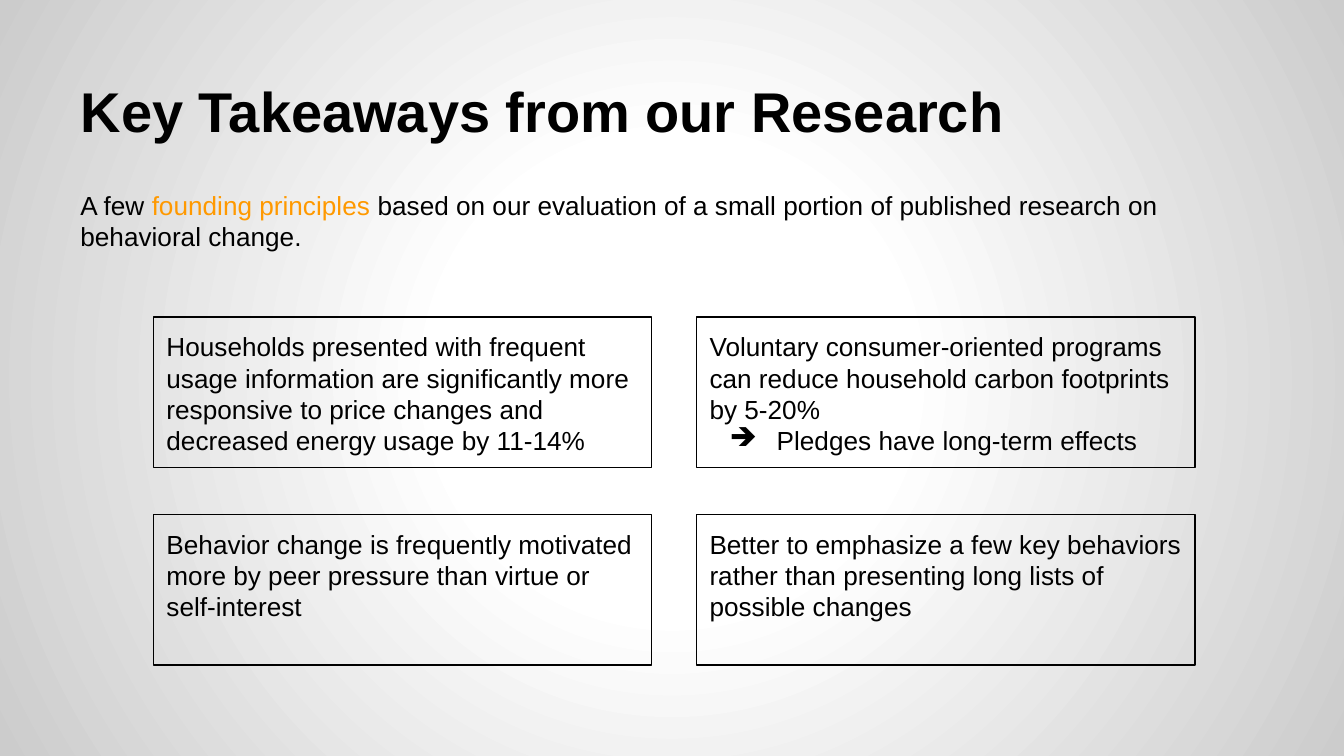
import pptx
import pptx.dml.color
import pptx.enum.shapes
import pptx.enum.text
import pptx.oxml
import pptx.oxml.ns
import pptx.util

Pt = pptx.util.Pt
RGBColor = pptx.dml.color.RGBColor

BLACK = RGBColor(0x00, 0x00, 0x00)
ORANGE = RGBColor(0xFF, 0x99, 0x00)
WHITE = RGBColor(0xFF, 0xFF, 0xFF)
GREY = RGBColor(0xCC, 0xCC, 0xCC)

BODY = {"name": "Arial", "size": Pt(14), "bold": False}
TITLE = {"name": "Arial", "size": Pt(30), "bold": True}
MARGIN = Pt(7.2)
FRAME = {"word_wrap": True, "margin_left": MARGIN, "margin_right": MARGIN,
         "margin_top": MARGIN, "margin_bottom": MARGIN,
         "auto_size": pptx.enum.text.MSO_AUTO_SIZE.NONE}

BOX_LEFT, BOX_TOP = 82.1, 169.9
BOX_WIDTH, BOX_HEIGHT = 267.1, 80.6
COLUMN_STEP, ROW_STEP = 290.9, 105.8

INTRO = [
    ("A few ", BLACK),
    ("founding principles ", ORANGE),
    ("based on our evaluation of a small portion of published research "
     "on behavioral change.", BLACK),
]
PLEDGES = "Pledges have long-term effects"
TAKEAWAYS = [
    ["Households presented with frequent usage information are significantly "
     "more responsive to price changes and decreased energy usage by 11-14%"],
    ["Voluntary consumer-oriented programs can reduce household carbon "
     "footprints by 5-20%", PLEDGES],
    ["Behavior change is frequently motivated more by peer pressure than "
     "virtue or self-interest"],
    ["Better to emphasize a few key behaviors rather than presenting long "
     "lists of possible changes"],
]


def set_attributes(obj, values):
    for name, value in values.items():
        setattr(obj, name, value)


def set_frame(tf, anchor):
    set_attributes(tf, FRAME)
    tf.vertical_anchor = anchor


def add_run(p, text, font, color=BLACK):
    r = p.add_run()
    r.text = text
    set_attributes(r.font, font)
    r.font.color.rgb = color


def set_radial_background(s):
    """Fill the slide with a circular gradient, white in the middle."""
    fill = s.background.fill
    fill.gradient()
    grad = s.background._cSld.bg.bgPr.find(pptx.oxml.ns.qn("a:gradFill"))
    for child in list(grad):
        grad.remove(child)
    stops = "".join(
        f'<a:gs pos="{percent * 1000}"><a:srgbClr val="{color}"/></a:gs>'
        for percent, color in [(0, WHITE), (30, WHITE), (100, GREY)])
    new = pptx.oxml.parse_xml(
        f'<a:gradFill {pptx.oxml.ns.nsdecls("a")}><a:gsLst>{stops}</a:gsLst>'
        '<a:path path="circle"><a:fillToRect l="50000" t="50000" r="50000" '
        'b="50000"/></a:path></a:gradFill>')
    grad.extend(list(new))


def set_title(s, text):
    sp = s.shapes.title
    set_attributes(sp, {"left": Pt(36), "top": Pt(16.6),
                        "width": Pt(648), "height": Pt(67.7)})
    set_frame(sp.text_frame, pptx.enum.text.MSO_ANCHOR.BOTTOM)
    p = sp.text_frame.paragraphs[0]
    p.alignment = pptx.enum.text.PP_ALIGN.LEFT
    add_run(p, text, TITLE)


def add_intro(s, parts):
    sp = s.shapes.add_textbox(Pt(36), Pt(94.3), Pt(648), Pt(63.4))
    set_frame(sp.text_frame, pptx.enum.text.MSO_ANCHOR.TOP)
    for text, color in parts:
        add_run(sp.text_frame.paragraphs[0], text, BODY, color)


def add_arrow_bullet(p):
    pPr = p._p.get_or_add_pPr()
    pPr.set("marL", str(Pt(36)))
    pPr.set("indent", str(-Pt(25.2)))
    bullet = pptx.oxml.parse_xml(
        f'<a:buChar {pptx.oxml.ns.nsdecls("a")} char="➔"/>')
    pPr.append(bullet)


def add_takeaway(s, left, top, lines):
    sp = s.shapes.add_shape(pptx.enum.shapes.MSO_SHAPE.RECTANGLE,
                            Pt(left), Pt(top), Pt(BOX_WIDTH), Pt(BOX_HEIGHT))
    sp.shadow.inherit = False
    sp.fill.background()
    sp.line.color.rgb = BLACK
    sp.line.width = Pt(0.75)
    tf = sp.text_frame
    set_frame(tf, pptx.enum.text.MSO_ANCHOR.TOP)
    for i, line in enumerate(lines):
        p = tf.add_paragraph() if i else tf.paragraphs[0]
        p.alignment = pptx.enum.text.PP_ALIGN.LEFT
        if i:
            add_arrow_bullet(p)
        add_run(p, line, BODY)


def main():
    prs = pptx.Presentation()
    prs.slide_width, prs.slide_height = Pt(720), Pt(405)
    s = prs.slides.add_slide(prs.slide_layouts.get_by_name("Title Only"))
    set_radial_background(s)
    set_title(s, "Key Takeaways from our Research")
    add_intro(s, INTRO)
    for i, lines in enumerate(TAKEAWAYS):
        row, column = divmod(i, 2)
        add_takeaway(s, BOX_LEFT + column * COLUMN_STEP,
                     BOX_TOP + row * ROW_STEP, lines)
    prs.save("out.pptx")


if __name__ == "__main__":
    main()
